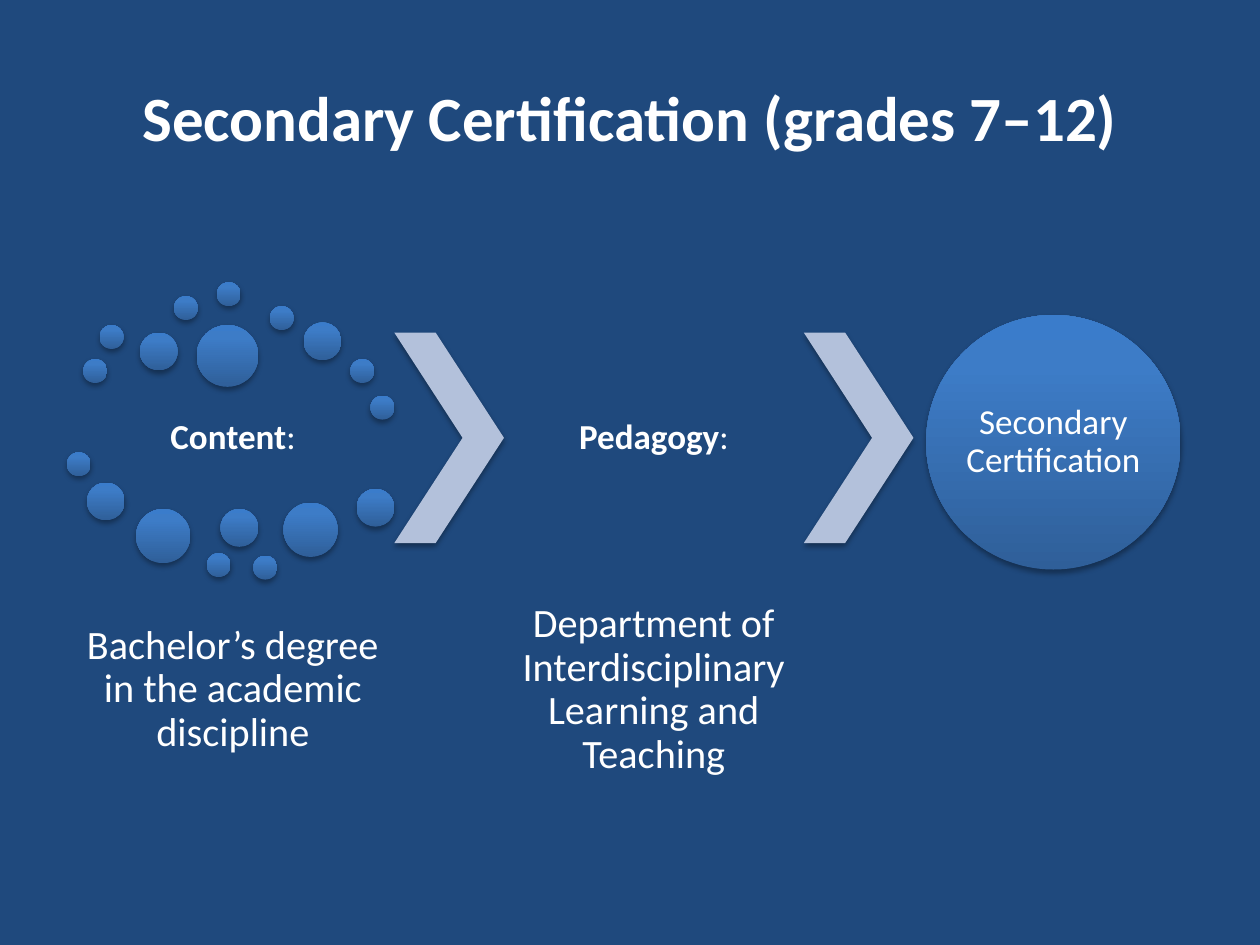
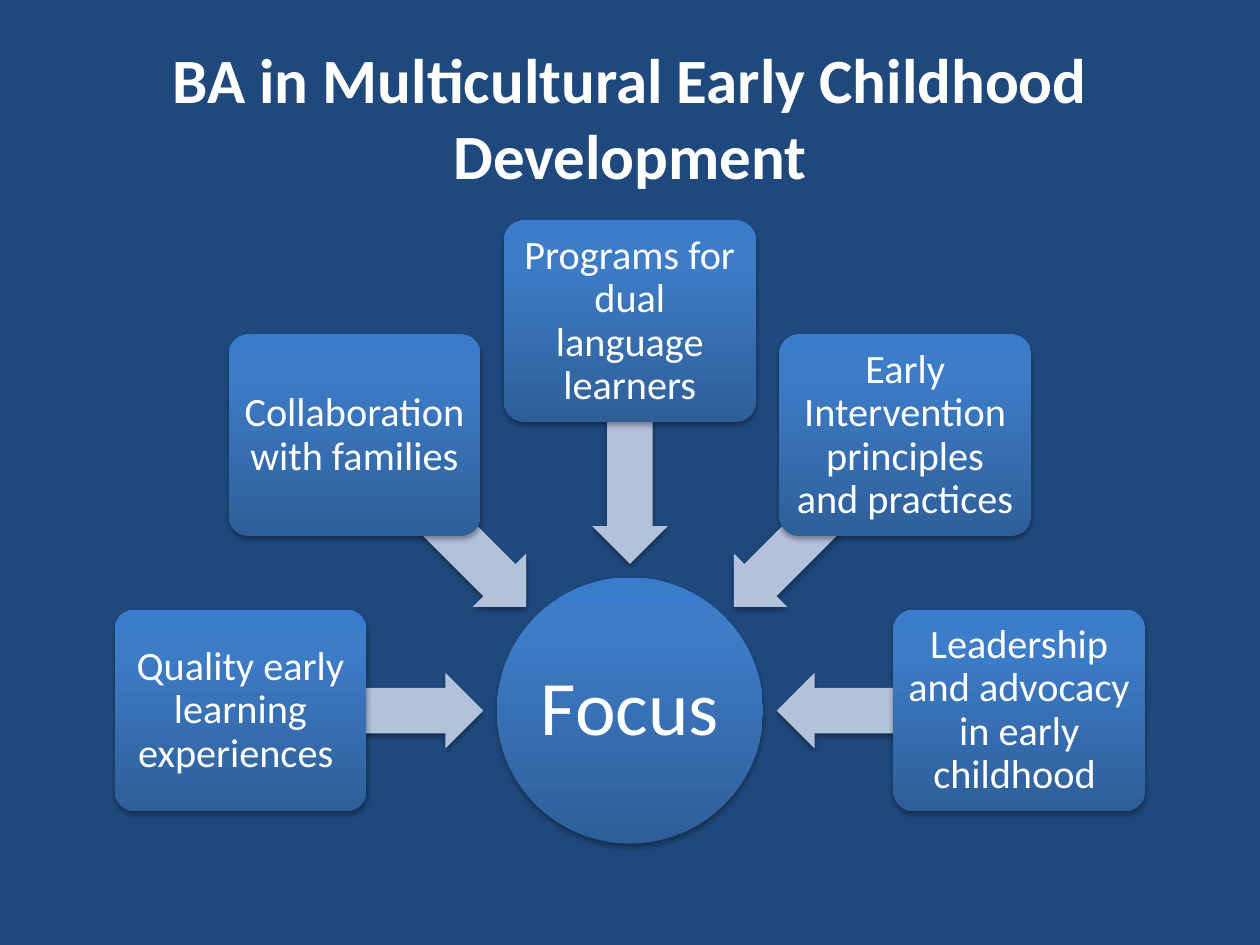
from dataclasses import dataclass
from math import cos, radians, sin

from lxml.etree import SubElement
from pptx import Presentation
from pptx.dml.color import RGBColor
from pptx.enum.shapes import MSO_SHAPE
from pptx.enum.text import MSO_ANCHOR, PP_ALIGN
from pptx.oxml.ns import qn
from pptx.util import Inches, Pt


@dataclass(frozen=True)
class Theme:
    font: str = "Calibri"
    back: str = "1F497D"
    text: str = "FFFFFF"
    arrow: str = "B3C1DB"
    shade: str = "000000"
    # Gradient stops in percent, from the bottom of the shape upwards
    blue: tuple = ((0, "2F5F99"), (80, "3D7CC7"), (100, "3A7CCB"))
    title: int = 36
    hub: int = 44
    body: int = 23
    label: int = 20


class Deck:
    def __init__(self, theme):
        self.theme = theme
        self.prs = Presentation()
        self.prs.slide_width = Inches(10)
        self.prs.slide_height = Inches(7.5)
        self.slide = None

    def page(self, title):
        self.slide = self.prs.slides.add_slide(self.prs.slide_layouts[6])
        fill = self.slide.background.fill
        fill.solid()
        fill.fore_color.rgb = RGBColor.from_string(self.theme.back)
        self.text(title, 0.5, 0.3, 9, 1.25, self.theme.title,
                  bold=True, inset=0.1, space=1)

    def text(self, words, left, top, width, height, size,
             bold=False, tail="", inset=0.03, space=0.9):
        """Add a text box; tail is a second run in regular weight."""
        box = self.slide.shapes.add_textbox(
            Inches(left), Inches(top), Inches(width), Inches(height))
        self.letter(box, words, size, bold, tail, inset, space)

    def letter(self, shape, words, size, bold=False, tail="", inset=0.0, space=0.9):
        """Set and format the text of a shape."""
        frame = shape.text_frame
        frame.word_wrap = True
        frame.vertical_anchor = MSO_ANCHOR.MIDDLE
        frame.margin_left = frame.margin_right = Inches(inset)
        frame.margin_top = frame.margin_bottom = Inches(inset)
        frame.text = words
        para = frame.paragraphs[0]
        para.alignment = PP_ALIGN.CENTER
        para.line_spacing = space
        if tail:
            para.add_run().text = tail
        for run in para.runs:
            run.font.name = self.theme.font
            run.font.size = Pt(size)
            run.font.bold = False
            run.font.color.rgb = RGBColor.from_string(self.theme.text)
        para.runs[0].font.bold = bold

    def shape(self, kind, left, top, width, height, adjust=()):
        item = self.slide.shapes.add_shape(
            kind, Inches(left), Inches(top), Inches(width), Inches(height))
        for i, value in enumerate(adjust):
            item.adjustments[i] = value
        item.line.fill.background()
        self.shadow(item)
        return item

    def shadow(self, item):
        item.shadow.inherit = False
        effects = item._element.spPr.find(qn("a:effectLst"))
        outer = SubElement(effects, qn("a:outerShdw"), blurRad="40000",
                           dist="23000", dir="5400000", rotWithShape="0")
        color = SubElement(outer, qn("a:srgbClr"), val=self.theme.shade)
        SubElement(color, qn("a:alpha"), val="35000")

    def glossy(self, *args):
        """Add a shape with the blue gradient."""
        item = self.shape(*args)
        item.fill.gradient()
        item.fill.gradient_angle = 90
        stops = item._element.spPr.find(qn("a:gradFill")).find(qn("a:gsLst"))
        stops.clear()
        for place, color in self.theme.blue:
            stop = SubElement(stops, qn("a:gs"), pos=str(place * 1000))
            SubElement(stop, qn("a:srgbClr"), val=color)
        return item

    def circle(self, left, top, size):
        return self.glossy(MSO_SHAPE.OVAL, left, top, size, size)

    def card(self, words, x, y):
        """Add a rounded card centred on x, y."""
        width, height = 2, 1.6
        item = self.glossy(MSO_SHAPE.ROUNDED_RECTANGLE, x - width / 2,
                           y - height / 2, width, height, (0.1,))
        self.letter(item, words, self.theme.body, inset=0.05)

    def pale(self, *args):
        """Add a shape in the plain arrow colour."""
        item = self.shape(*args)
        item.fill.solid()
        item.fill.fore_color.rgb = RGBColor.from_string(self.theme.arrow)
        return item

    def chevron(self, left):
        self.pale(MSO_SHAPE.CHEVRON, left, 2.64, 0.87, 1.67, (0.623,))

    def arrow(self, x, y, turn):
        """Add a left arrow centred on x, y, turned clockwise."""
        width, height = 1.93, 0.6
        item = self.pale(MSO_SHAPE.LEFT_ARROW, x - width / 2,
                         y - height / 2, width, height, (0.6, 0.5))
        item.rotation = turn


DOTS = {  # diameter: left and top of each dot
    0.19: [(0.66, 2.85), (0.79, 2.58), (1.38, 2.35), (1.72, 2.24), (2.14, 2.43),
           (2.78, 2.85), (2.94, 3.14), (0.53, 3.59), (1.64, 4.39), (2.01, 4.41)],
    0.3: [(1.11, 2.64), (2.41, 2.56), (0.69, 3.83), (1.75, 4.04), (2.83, 3.88)],
    0.43: [(1.08, 4.04), (2.25, 3.99)],
    0.49: [(1.56, 2.58)],
}
STEPS = [  # left, chevron left, label, caption
    (0.66, 3.13, "Content", "Bachelor’s degree in the academic discipline"),
    (4, 6.38, "Pedagogy", "Department of Interdisciplinary Learning and Teaching"),
]
TOPICS = [
    "Quality early learning experiences ",
    "Collaboration with families",
    "Programs for dual language learners",
    "Early Intervention principles and practices",
    "Leadership and advocacy in early childhood ",
]


def steps(deck):
    theme = deck.theme
    deck.page("Secondary Certification (grades 7–12)")
    for size, spots in DOTS.items():
        for left, top in spots:
            deck.circle(left, top, size)
    for left, edge, label, caption in STEPS:
        deck.text(label, left, 3.09, 2.38, 0.78, theme.label, bold=True, tail=":")
        deck.text(caption, left, 4.74, 2.38, 1.47, theme.body)
        deck.chevron(edge)
    goal = deck.circle(7.35, 2.5, 2.02)
    deck.letter(goal, "Secondary Certification", theme.label)


def focus(deck):
    """Draw topic cards on a half ring, each pointing at the hub."""
    deck.page("BA in Multicultural Early Childhood Development")
    x, y, size = 5, 5.64, 2.11
    hub = deck.circle(x - size / 2, y - size / 2, size)
    deck.letter(hub, "Focus", deck.theme.hub)
    for i, topic in enumerate(TOPICS):
        turn = 180 + 180 * i / (len(TOPICS) - 1)
        dx, dy = cos(radians(turn)), sin(radians(turn))
        deck.arrow(x + 2.13 * dx, y + 2.13 * dy, turn % 360)
        deck.card(topic, x + 3.09 * dx, y + 3.09 * dy)


def main():
    deck = Deck(Theme())
    steps(deck)
    focus(deck)
    deck.prs.save("out.pptx")


if __name__ == "__main__":
    main()
